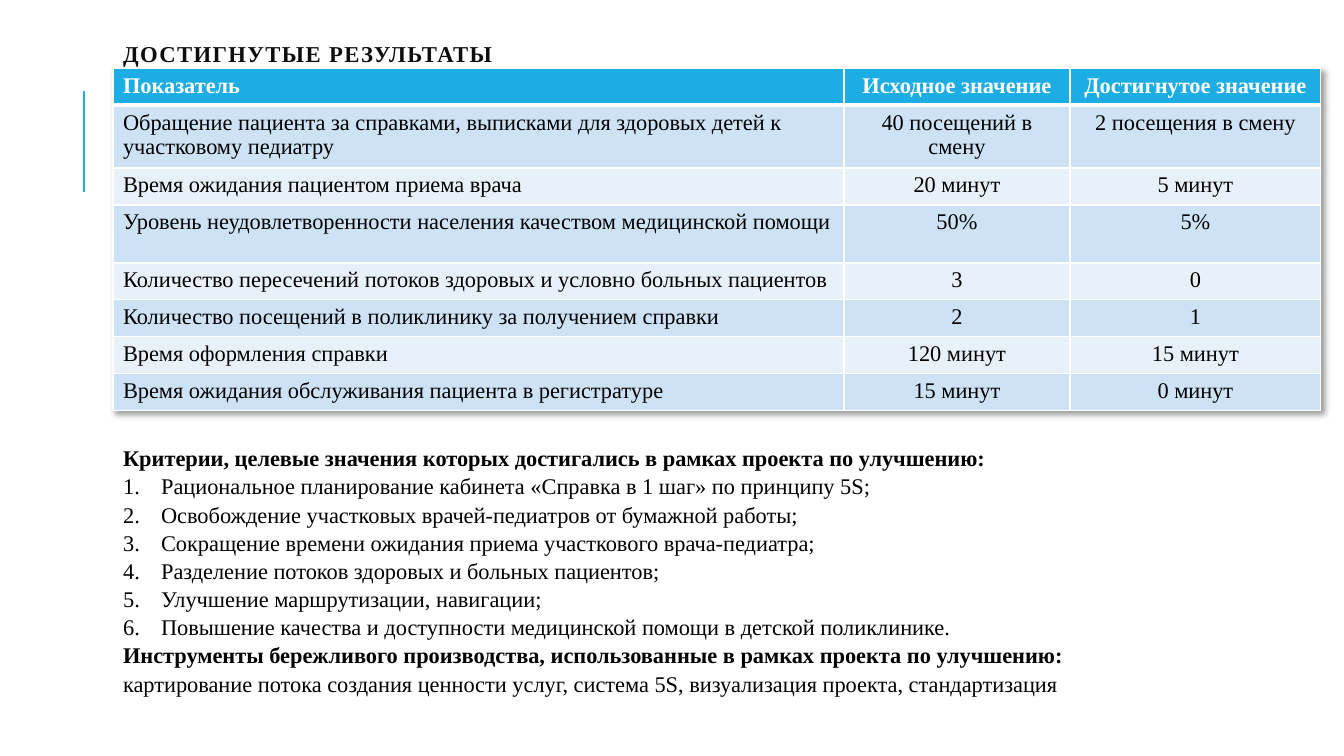
from lxml import etree
from pptx import Presentation
from pptx.dml.color import RGBColor
from pptx.enum.text import MSO_ANCHOR, MSO_AUTO_SIZE, PP_ALIGN
from pptx.oxml import parse_xml
from pptx.oxml.ns import nsdecls, qn
from pptx.util import Emu, Pt

TITLE = "ДОСТИГНУТЫЕ РЕЗУЛЬТАТЫ"
RESULTS = [
    ("Показатель", "Исходное значение", "Достигнутое значение"),
    ("Обращение пациента за справками, выписками для здоровых детей к участковому педиатру",
     "40 посещений в смену", "2 посещения в смену"),
    ("Время ожидания пациентом приема врача", "20 минут", "5 минут"),
    ("Уровень неудовлетворенности населения качеством медицинской помощи", "50%", "5%"),
    ("Количество пересечений потоков здоровых и условно больных пациентов", "3", "0"),
    ("Количество посещений в поликлинику за получением справки", "2", "1"),
    ("Время оформления справки", "120 минут", "15 минут"),
    ("Время ожидания обслуживания пациента в регистратуре", "15 минут", "0 минут"),
]
HEADING, NUMBERED, PLAIN = "heading", "numbered", "plain"
CRITERIA = [
    (HEADING, "Критерии, целевые значения которых достигались в рамках проекта по улучшению:"),
    (NUMBERED, "Рациональное планирование кабинета «Справка в 1 шаг» по принципу 5S;"),
    (NUMBERED, "Освобождение участковых врачей-педиатров от бумажной работы;"),
    (NUMBERED, "Сокращение времени ожидания приема участкового врача-педиатра;"),
    (NUMBERED, "Разделение потоков здоровых и больных пациентов;"),
    (NUMBERED, "Улучшение маршрутизации, навигации;"),
    (NUMBERED, "Повышение качества и доступности медицинской помощи в детской поликлинике."),
    (HEADING, "Инструменты бережливого производства, использованные в рамках проекта по улучшению:"),
    (PLAIN, "картирование потока создания ценности услуг, система 5S, визуализация проекта, "
            "стандартизация"),
]

FONT = "Times New Roman"
ACCENT, WHITE, BLACK, TITLE_INK = "1CADE4", "FFFFFF", "000000", "0D0D0D"
BANDS = ("E8F1FA", "CDE3F5")
LEFT, WIDTH = 113, 1209
COLUMNS = (731, 226, 251)
ROWS = (37, 63, 37, 58, 37, 37, 37, 37)
INDENT = 38


def px(length):
    return Emu(round(length * 914400 / 100.8))


def rgb(color):
    return RGBColor.from_string(color)


def set_font(paragraph, color, bold, size=16):
    font = paragraph.font
    font.name, font.size, font.bold = FONT, Pt(size), bold
    font.color.rgb = rgb(color)


def place(shape, top, height):
    shape.left, shape.top, shape.width, shape.height = map(px, (LEFT, top, WIDTH, height))


def add_title(slide):
    title = slide.shapes.title
    place(title, 45, 22)
    frame = title.text_frame
    frame.text = TITLE
    frame.auto_size = MSO_AUTO_SIZE.NONE
    frame.vertical_anchor = MSO_ANCHOR.MIDDLE
    heading = frame.paragraphs[0]
    heading.alignment = PP_ALIGN.LEFT
    heading.line_spacing = 0.8
    set_font(heading, TITLE_INK, True, 16.2)
    heading.runs[0].font._element.set("spc", "100")


def add_criteria(slide):
    body = slide.placeholders[1]
    place(body, 438, 281)
    frame = body.text_frame
    frame.auto_size = MSO_AUTO_SIZE.NONE
    frame.vertical_anchor = MSO_ANCHOR.TOP
    frame.text = "\n".join(text for _, text in CRITERIA)
    for paragraph, (role, _) in zip(frame.paragraphs, CRITERIA):
        paragraph.alignment = PP_ALIGN.LEFT
        paragraph.space_before = Pt(0)
        paragraph.line_spacing = 1.05
        indent = px(INDENT) if role == NUMBERED else 0
        properties = paragraph._p.get_or_add_pPr()
        properties.set("marL", str(indent))
        properties.set("indent", str(-indent))
        if role == NUMBERED:
            etree.SubElement(properties, qn("a:buFont"), typeface="+mj-lt")
            etree.SubElement(properties, qn("a:buAutoNum"), type="arabicPeriod")
        else:
            etree.SubElement(properties, qn("a:buNone"))
        set_font(paragraph, BLACK, role == HEADING)


def set_borders(cell, bottom):
    """Draw white cell borders, 1 pt except for the given bottom width."""
    properties = cell._tc.get_or_add_tcPr()
    for index, (side, width) in enumerate((("L", 1), ("R", 1), ("T", 1), ("B", bottom))):
        properties.insert(index, parse_xml(
            f'<a:ln{side} {nsdecls("a")} w="{Pt(width)}"><a:solidFill>'
            f'<a:srgbClr val="{WHITE}"/></a:solidFill></a:ln{side}>'))


def add_results(slide):
    table = slide.shapes.add_table(len(ROWS), len(COLUMNS), px(LEFT), px(68),
                                   px(sum(COLUMNS)), px(sum(ROWS))).table
    table._tbl.tblPr.insert(0, parse_xml(
        f'<a:effectLst {nsdecls("a")}><a:outerShdw blurRad="50800" dist="38100" dir="2700000" '
        f'algn="tl" rotWithShape="0"><a:srgbClr val="{BLACK}"><a:alpha val="40000"/>'
        '</a:srgbClr></a:outerShdw></a:effectLst>'))
    for column, width in zip(table.columns, COLUMNS):
        column.width = px(width)
    for row, height in zip(table.rows, ROWS):
        row.height = px(height)
    for r, values in enumerate(RESULTS):
        header = r == 0
        for c, value in enumerate(values):
            cell = table.cell(r, c)
            cell.text = value
            cell.fill.solid()
            cell.fill.fore_color.rgb = rgb(ACCENT if header else BANDS[r % 2])
            set_borders(cell, 3 if header else 1)
            paragraph = cell.text_frame.paragraphs[0]
            paragraph.alignment = PP_ALIGN.CENTER if c else PP_ALIGN.LEFT
            set_font(paragraph, WHITE if header else BLACK, header)


def add_accent_line(slide):
    accent = slide.shapes.add_connector(1, px(84), px(192), px(84), px(91))
    accent.line.color.rgb = rgb(ACCENT)
    accent.line.width = Pt(1.5)
    etree.SubElement(accent._element.spPr, qn("a:effectLst"))


def main():
    presentation = Presentation()
    presentation.slide_width, presentation.slide_height = px(1344), px(756)
    slide = presentation.slides.add_slide(presentation.slide_layouts[1])
    add_accent_line(slide)
    add_title(slide)
    add_criteria(slide)
    add_results(slide)
    presentation.save("out.pptx")


if __name__ == "__main__":
    main()
